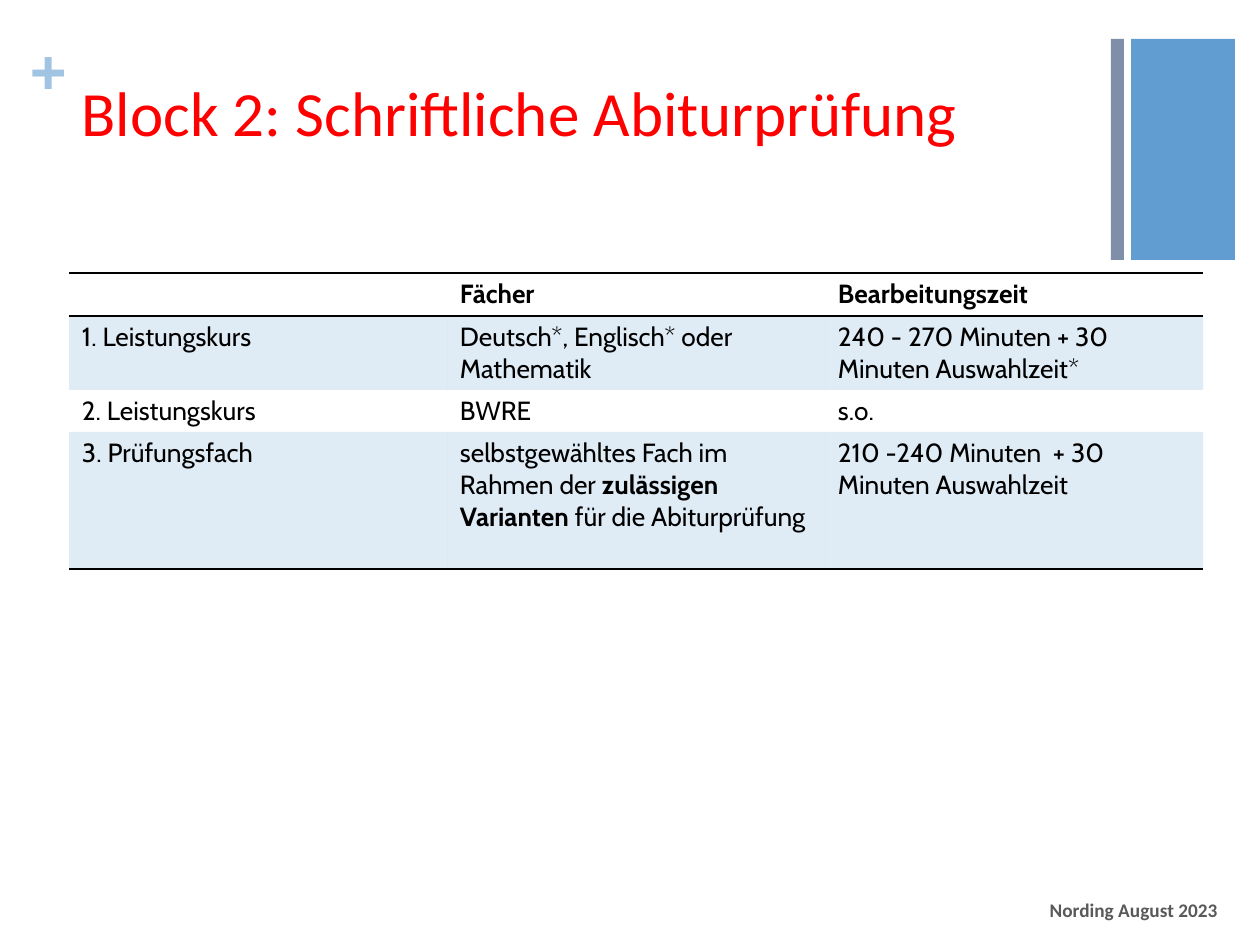
from lxml.etree import SubElement
from pptx import Presentation
from pptx.dml.color import RGBColor
from pptx.enum.shapes import MSO_SHAPE
from pptx.enum.text import MSO_ANCHOR, MSO_AUTO_SIZE, PP_ALIGN
from pptx.oxml import parse_xml
from pptx.oxml.ns import nsdecls, qn
from pptx.util import Emu, Pt

BLUE, BLACK = "629DD1", "000000"
NO_STYLE = "{2D5ABB26-0587-4C30-8999-92F81FD0307C}"


def px(n):
    return Emu(round(n * 914400 / 126))


def tint(hue):
    return RGBColor.from_string(hue)


def rule(cell, side):
    """Draw a 1 pt black border on side T or B of a cell."""
    props = cell._tc.get_or_add_tcPr()
    line = parse_xml(
        f'<a:ln{side} {nsdecls("a")} w="12700"><a:solidFill>'
        f'<a:srgbClr val="{BLACK}"/></a:solidFill></a:ln{side}>')
    props.insert(1 if side == "B" and props.find(qn("a:lnT")) is not None else 0, line)


class Deck:
    """Holds the fonts and the slide being built."""
    head, body = "Calibri", "Cabin"

    def __init__(self):
        self.prs = Presentation()
        self.prs.slide_width, self.prs.slide_height = px(1260), px(945)
        self.slide = self.prs.slides.add_slide(self.prs.slide_layouts[5])

    def run(self, par, text, font, size, hue, bold=False):
        run = par.add_run()
        run.text = text
        run.font.name, run.font.size, run.font.bold = font, Pt(size), bold
        run.font.color.rgb = tint(hue)

    def title(self, box, text):
        shape = self.slide.shapes.title
        shape.left, shape.top, shape.width, shape.height = map(px, box)
        frame = shape.text_frame
        frame.auto_size = MSO_AUTO_SIZE.NONE
        frame.vertical_anchor = MSO_ANCHOR.TOP
        par = frame.paragraphs[0]
        par.alignment = PP_ALIGN.LEFT
        self.run(par, text, self.head, 36, "FF0000")

    def bar(self, box, hue):
        shape = self.slide.shapes.add_shape(MSO_SHAPE.RECTANGLE, *map(px, box))
        shape.shadow.inherit = False
        shape.fill.solid()
        shape.fill.fore_color.rgb = tint(hue)
        shape.line.fill.background()

    def label(self, box, text, font, size, hue, align=PP_ALIGN.LEFT, inset=True):
        frame = self.slide.shapes.add_textbox(*map(px, box)).text_frame
        frame.word_wrap = True
        frame.vertical_anchor = MSO_ANCHOR.MIDDLE if inset else MSO_ANCHOR.TOP
        if not inset:
            frame.margin_left = frame.margin_right = 0
            frame.margin_top = frame.margin_bottom = 0
        par = frame.paragraphs[0]
        par.alignment = align
        self.run(par, text, font, size, hue, True)

    def cell(self, cell, parts, head, band):
        """Fill a cell; every second part of its text is bold."""
        cell.margin_left = cell.margin_right = px(13)
        cell.margin_top = cell.margin_bottom = px(5)
        par = cell.text_frame.paragraphs[0]
        for i, part in enumerate(parts):
            self.run(par, part, self.body, 15, BLACK, head or i % 2 == 1)
        if not parts:
            par._p.get_or_add_endParaRPr().set("sz", "1500")
        if band:
            cell.fill.solid()
            cell.fill.fore_color.rgb = tint(BLUE)
            color = cell._tc.tcPr.find(".//" + qn("a:srgbClr"))
            SubElement(color, qn("a:alpha")).set("val", "20000")
        else:
            cell.fill.background()

    def table(self, left, top, wide, highs, rows):
        size = len(rows), len(rows[0])
        box = map(px, (left, top, wide, sum(highs)))
        table = self.slide.shapes.add_table(*size, *box).table
        table._tbl.tblPr.find(qn("a:tableStyleId")).text = NO_STYLE
        for r, (high, row) in enumerate(zip(highs, rows)):
            table.rows[r].height = px(high)
            for c, parts in enumerate(row):
                cell = table.cell(r, c)
                self.cell(cell, parts, r == 0, r % 2 == 1)
                if r == 0:
                    rule(cell, "T")
                if r in (0, len(rows) - 1):
                    rule(cell, "B")


ROWS = [
    [[], ["Fächer"], ["Bearbeitungszeit"]],
    [["1. Leistungskurs"], ["Deutsch*, Englisch* oder Mathematik"],
     ["240 - 270 Minuten + 30 Minuten Auswahlzeit*"]],
    [["2. Leistungskurs"], ["BWRE"], ["s.o."]],
    [["3. Prüfungsfach"],
     ["selbstgewähltes Fach im Rahmen der ", "zulässigen Varianten",
      " für die Abiturprüfung"],
     ["210 -240 Minuten  + 30 Minuten Auswahlzeit"]],
]


def main():
    deck = Deck()
    deck.label((30, 32, 36, 77), "+", "Arial", 36, "A1C4E3", inset=False)
    deck.bar((1131, 39, 104, 221), BLUE)
    deck.bar((1111, 39, 13, 221), "7F8FA9")
    deck.title((69, 67, 1041, 154), "Block 2: Schriftliche Abiturprüfung")
    deck.table(69, 273, 1134, (43, 74, 42, 137), ROWS)
    deck.label((936, 885, 294, 50), "Nording August 2023", deck.head, 11,
               "595959", PP_ALIGN.RIGHT)
    deck.prs.save("out.pptx")


if __name__ == "__main__":
    main()
